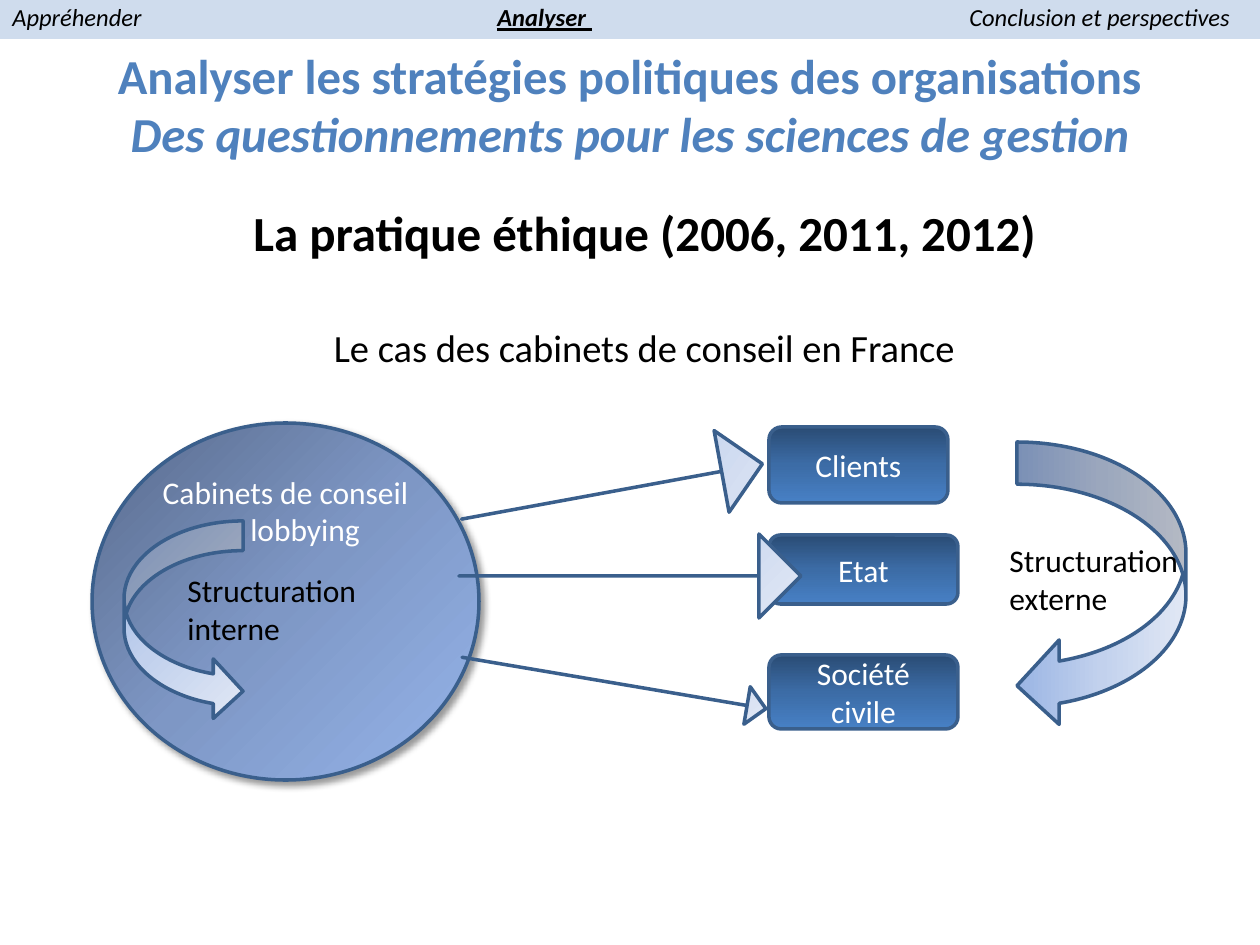
import copy

import lxml.etree
import pptx
import pptx.dml.color
import pptx.enum.shapes
import pptx.enum.text
import pptx.oxml.ns
import pptx.util

SHAPE = pptx.enum.shapes.MSO_SHAPE
ALIGN = pptx.enum.text.PP_ALIGN
ANCHOR = pptx.enum.text.MSO_ANCHOR
qn = pptx.oxml.ns.qn

EMU_PER_PX = 914400 // 126
FONT = "Calibri"
COLORS = {
    "accent": "4F81BD", "outline": "3A5F8C", "black": "000000", "white": "FFFFFF",
}
GRADIENTS = {
    "firm": ("586A8B", "7E97C5", "95B4EA"),
    "target": ("2A4C75", "3C6CA6", "4780C5"),
    "arrow": ("9AB5E4", "C2D1ED", "E1E8F5"),
}

TITLE = [
    ("Analyser les stratégies politiques des organisations", False),
    ("Des questionnements pour les sciences de gestion", True),
]
# text, size, bold, space before in points
SUBTITLE = [
    ("La pratique éthique (2006, 2011, 2012)", 28, True, 0),
    ("Le cas des cabinets de conseil en France", 22, False, 41),
]
# text, current section, tab stop in px
SECTIONS = [
    ("Appréhender", False, 0),
    ("Analyser ", True, 485),
    ("Conclusion et perspectives", False, 957),
]
FIRM = ("Cabinets de conseil en lobbying", (92, 423, 387, 357))
TARGETS = [
    ("Etat", (769, 535, 189, 69)),
    ("Société civile", (769, 655, 189, 74)),
    ("Clients", (769, 427, 179, 76)),
]
# box, rotation
INFLUENCES = [
    ((459, 534, 342, 84), 0),
    ((460, 664, 308, 38), 9.6),
    ((459, 450, 306, 83), 349.6),
]
# arrow shape, arrow box, gradient angle, label, label box
LOOPS = [
    (SHAPE.CURVED_LEFT_ARROW, (1017, 442, 169, 286), 0,
     "Structuration externe", (997, 535, 208, 89)),
    (SHAPE.CURVED_RIGHT_ARROW, (124, 521, 119, 200), 45,
     "Structuration interne", (175, 565, 218, 89)),
]


def px(value):
    return pptx.util.Emu(value * EMU_PER_PX)


def rgb(name):
    return pptx.dml.color.RGBColor.from_string(COLORS.get(name, name))


def write(para, text, size=18, color="black", bold=False, italic=False, underline=False):
    span = para.add_run()
    span.text = text
    font = span.font
    font.name, font.size = FONT, pptx.util.Pt(size)
    font.bold, font.italic, font.underline = bold, italic, underline
    font.color.rgb = rgb(color)


def add_text_box(page, box):
    frame = page.shapes.add_textbox(*map(px, box)).text_frame
    frame.word_wrap = True
    return frame


def add_gradient_shape(page, kind, box, gradient, angle):
    """Add an outlined shape with three evenly spaced stops; angle is clockwise."""
    shape = page.shapes.add_shape(kind, *map(px, box))
    shape.shadow.inherit = False
    shape.line.color.rgb = rgb("outline")
    shape.line.width = pptx.util.Pt(2)
    shape.fill.gradient()
    shape.fill.gradient_angle = (360 - angle) % 360
    stops = shape.element.spPr.find(".//" + qn("a:gsLst"))
    stops.insert(1, copy.deepcopy(stops[0]))
    for stop, color, position in zip(shape.fill.gradient_stops, GRADIENTS[gradient], (0, 0.5, 1)):
        stop.color.rgb = rgb(color)
        stop.position = position
    return shape


def label_shape(shape, text):
    frame = shape.text_frame
    frame.word_wrap = True
    frame.vertical_anchor = ANCHOR.MIDDLE
    para = frame.paragraphs[0]
    para.alignment = ALIGN.CENTER
    write(para, text, color="white")
    return frame


def set_alpha(color_element, percent):
    lxml.etree.SubElement(color_element, qn("a:alpha"), val=str(percent * 1000))


def add_shadow(shape):
    effects = shape.element.spPr.find(qn("a:effectLst"))
    shadow = lxml.etree.SubElement(
        effects, qn("a:outerShdw"), blurRad=str(pptx.util.Pt(4)),
        dist=str(pptx.util.Pt(3)), dir=str(45 * 60000), rotWithShape="0")
    color = lxml.etree.SubElement(shadow, qn("a:srgbClr"), val=COLORS["black"])
    set_alpha(color, 40)


def add_title(page):
    title = page.shapes.title
    title.left, title.top, title.width, title.height = map(px, (0, 44, 1260, 120))
    frame = title.text_frame
    frame.auto_size = pptx.enum.text.MSO_AUTO_SIZE.NONE
    frame.vertical_anchor = ANCHOR.MIDDLE
    frame.margin_top = frame.margin_bottom = 0
    para = frame.paragraphs[0]
    para.alignment = ALIGN.CENTER
    for index, (text, italic) in enumerate(TITLE):
        if index:
            para.add_line_break()
        write(para, text, size=27.9, color="accent", bold=True, italic=italic)


def add_subtitle(page):
    frame = add_text_box(page, (94, 204, 1101, 694))
    frame.margin_top = px(10)
    for index, (text, size, bold, gap) in enumerate(SUBTITLE):
        para = frame.add_paragraph() if index else frame.paragraphs[0]
        para.alignment = ALIGN.CENTER
        para.line_spacing = 0.8
        para.space_before = pptx.util.Pt(gap)
        write(para, text, size=size, bold=bold)


def add_section_bar(page):
    bar = page.shapes.add_shape(SHAPE.RECTANGLE, *map(px, (0, -4, 1260, 43)))
    bar.shadow.inherit = False
    bar.line.fill.background()
    bar.fill.solid()
    bar.fill.fore_color.rgb = rgb("accent")
    set_alpha(bar.element.spPr.find(".//" + qn("a:srgbClr")), 27)
    frame = bar.text_frame
    frame.word_wrap = True
    frame.vertical_anchor = ANCHOR.TOP
    para = frame.paragraphs[0]
    para.alignment = ALIGN.LEFT
    tabs = lxml.etree.SubElement(para._p.get_or_add_pPr(), qn("a:tabLst"))
    for text, current, stop in SECTIONS:
        if stop:
            lxml.etree.SubElement(tabs, qn("a:tab"), pos=str(px(stop)), algn="l")
            write(para, "\t", size=14, italic=True)
        write(para, text, size=14, bold=current, italic=True, underline=current)


def add_diagram(page):
    text, box = FIRM
    firm = add_gradient_shape(page, SHAPE.OVAL, box, "firm", 45)
    add_shadow(firm)
    frame = label_shape(firm, text)
    frame.margin_top, frame.margin_bottom = 0, px(182)

    for text, box in TARGETS:
        label_shape(add_gradient_shape(page, SHAPE.ROUNDED_RECTANGLE, box, "target", 90), text)

    for box, rotation in INFLUENCES:
        arrow = add_gradient_shape(page, SHAPE.RIGHT_ARROW, box, "arrow", 45)
        arrow.adjustments[0], arrow.adjustments[1] = 0, 0.5
        arrow.rotation = rotation

    for kind, box, angle, text, label_box in LOOPS:
        add_gradient_shape(page, kind, box, "arrow", angle)
        write(add_text_box(page, label_box).paragraphs[0], text)


def main():
    deck = pptx.Presentation()
    deck.slide_width, deck.slide_height = px(1260), px(945)
    page = deck.slides.add_slide(deck.slide_layouts[5])
    add_title(page)
    add_subtitle(page)
    add_section_bar(page)
    add_diagram(page)
    deck.save("out.pptx")


if __name__ == "__main__":
    main()
